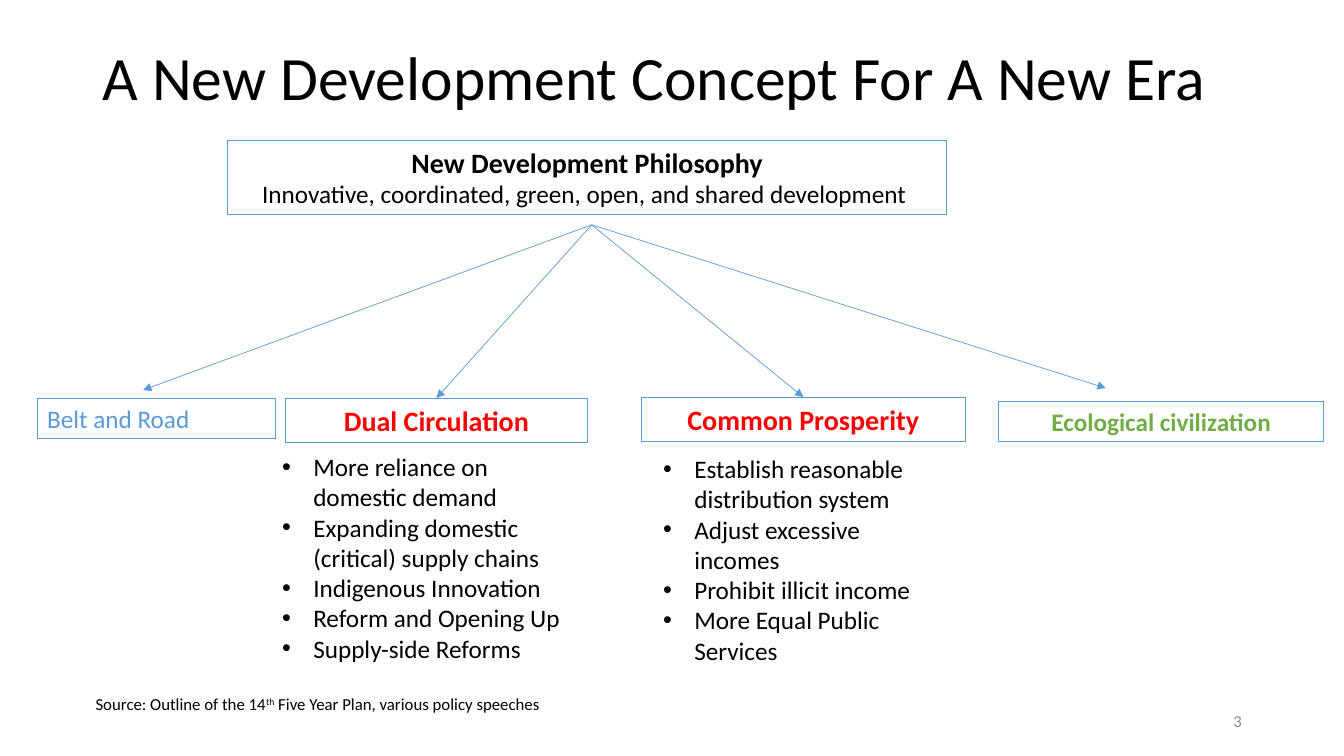
import pptx
import pptx.dml.color
import pptx.enum.shapes
import pptx.enum.text
import pptx.oxml.ns
import pptx.util
from dataclasses import dataclass
from lxml import etree

ALIGN = pptx.enum.text.PP_ALIGN
ANCHOR = pptx.enum.text.MSO_ANCHOR


@dataclass(frozen=True)
class Theme:
    font: str = "Calibri"
    ink: str = "000000"
    blue: str = "5B9BD5"
    red: str = "FF0000"
    green: str = "70AD47"
    grey: str = "8C8C8C"
    title: int = 44
    heading: int = 20
    body: int = 18
    small: int = 12
    border: float = 0.75
    arrow: float = 0.5
    indent: float = 0.31


def rgb(code):
    return pptx.dml.color.RGBColor.from_string(code)


def assign(target, values):
    for name, value in values.items():
        setattr(target, name, value)


def append_drawing(parent, tag, **attributes):
    return etree.SubElement(parent, pptx.oxml.ns.qn(f"a:{tag}"), attributes)


class Board:
    """Places elements on a slide by a grid of 40 columns and 30 rows."""

    COLUMNS, ROWS = 40, 30

    def __init__(self, deck, theme):
        self.theme = theme
        self.column = deck.slide_width / self.COLUMNS
        self.row = deck.slide_height / self.ROWS
        self.shapes = deck.slides.add_slide(deck.slide_layouts[6]).shapes

    def grid(self, *lengths):
        """Turn alternating columns and rows into slide units."""
        return [round(n * (self.row if i % 2 else self.column)) for i, n in enumerate(lengths)]

    def add_words(self, paragraph, text, size, color=None, bold=False, align=ALIGN.LEFT):
        paragraph.alignment = align
        run = paragraph.add_run()
        run.text = text
        assign(run.font, {"name": self.theme.font, "size": pptx.util.Pt(size), "bold": bold})
        run.font.color.rgb = rgb(color or self.theme.ink)
        return run

    def text(self, place, anchor=ANCHOR.TOP):
        frame = self.shapes.add_textbox(*self.grid(*place)).text_frame
        assign(frame, {"word_wrap": True, "vertical_anchor": anchor})
        return frame

    def label(self, place, text, anchor=ANCHOR.MIDDLE, spacing=1.0, **style):
        paragraph = self.text(place, anchor).paragraphs[0]
        paragraph.line_spacing = spacing
        self.add_words(paragraph, text, **style)
        return paragraph

    def box(self, place, *lines):
        rectangle = self.shapes.add_shape(
            pptx.enum.shapes.MSO_SHAPE.RECTANGLE, *self.grid(*place))
        rectangle.shadow.inherit = False
        rectangle.fill.background()
        rectangle.line.color.rgb = rgb(self.theme.blue)
        rectangle.line.width = pptx.util.Pt(self.theme.border)
        frame = rectangle.text_frame
        assign(frame, {"word_wrap": True, "vertical_anchor": ANCHOR.TOP})
        for index, line in enumerate(lines):
            paragraph = frame.add_paragraph() if index else frame.paragraphs[0]
            self.add_words(paragraph, **line)
        return rectangle

    def bullets(self, place, items):
        frame = self.text(place)
        indent = pptx.util.Inches(self.theme.indent)
        for index, item in enumerate(items):
            paragraph = frame.add_paragraph() if index else frame.paragraphs[0]
            self.add_words(paragraph, item, self.theme.body)
            properties = paragraph._p.get_or_add_pPr()
            properties.set("marL", str(indent))
            properties.set("indent", str(-indent))
            append_drawing(properties, "buFont", typeface="Arial")
            append_drawing(properties, "buChar", char="•")

    def arrow(self, start, end):
        """Draw to a grid point, or to the top of a rectangle and join it."""
        is_point = isinstance(end, tuple)
        tip = self.grid(*end) if is_point else (end.left + end.width // 2, end.top)
        line = self.shapes.add_connector(
            pptx.enum.shapes.MSO_CONNECTOR.STRAIGHT, *self.grid(*start), *tip)
        if not is_point:
            line.end_connect(end, 0)
        line.line.color.rgb = rgb(self.theme.blue)
        line.line.width = pptx.util.Pt(self.theme.arrow)
        append_drawing(line.line._get_or_add_ln(), "tailEnd", type="triangle")
        append_drawing(line._element.spPr, "effectLst")


def main():
    deck = pptx.Presentation()
    deck.slide_width = pptx.util.Inches(13.33)
    deck.slide_height = pptx.util.Inches(7.5)
    theme = Theme()
    board = Board(deck, theme)

    board.label((2.76, 1.6, 34.5, 3.2), "A New Development Concept For A New Era",
                spacing=0.9, size=theme.title)

    centred = {"align": ALIGN.CENTER}
    strong = {"size": theme.heading, "bold": True, **centred}
    board.box((6.78, 5.56, 21.39, 2.96),
              {"text": "New Development Philosophy", **strong},
              {"text": "Innovative, coordinated, green, open, and shared development ",
               "size": theme.body, **centred})

    circulation = board.box((8.49, 15.8, 9, 1.76),
                            {"text": "Dual Circulation", "color": theme.red, **strong})
    prosperity = board.box((19.08, 15.76, 9.66, 1.76),
                           {"text": "Common Prosperity", "color": theme.red, **strong})
    board.box((29.73, 15.92, 9.66, 1.6),
              {"text": "Ecological civilization", "color": theme.green,
               **strong, "size": theme.body})
    board.box((1.11, 15.8, 7.08, 1.6),
              {"text": "Belt and Road", "color": theme.blue, "size": theme.body})

    belt_tip, ecology_tip = (4.26, 15.48), (32.91, 15.4)
    for end in (belt_tip, circulation, prosperity, ecology_tip):
        board.arrow((17.61, 8.92), end)

    board.bullets((8.1, 17.72, 9, 10.08), [
        "More reliance on domestic demand",
        "Expanding domestic (critical) supply chains",
        "Indigenous Innovation",
        "Reform and Opening Up",
        "Supply-side Reforms",
    ])
    board.bullets((19.44, 17.8, 8.43, 8.88), [
        "Establish reasonable distribution system",
        "Adjust excessive incomes",
        "Prohibit illicit income",
        "More Equal Public Services",
    ])

    source = board.label((2.55, 27.32, 24.06, 1.2), "Source: Outline of the 14",
                         anchor=ANCHOR.TOP, size=theme.small)
    ordinal = board.add_words(source, "th", theme.small)
    ordinal._r.get_or_add_rPr().set("baseline", "30000")
    board.add_words(source, " Five Year Plan, various policy speeches", theme.small)

    board.label((28.26, 27.8, 9, 1.6), "3",
                size=theme.small, color=theme.grey, align=ALIGN.RIGHT)

    deck.save("out.pptx")


if __name__ == "__main__":
    main()
